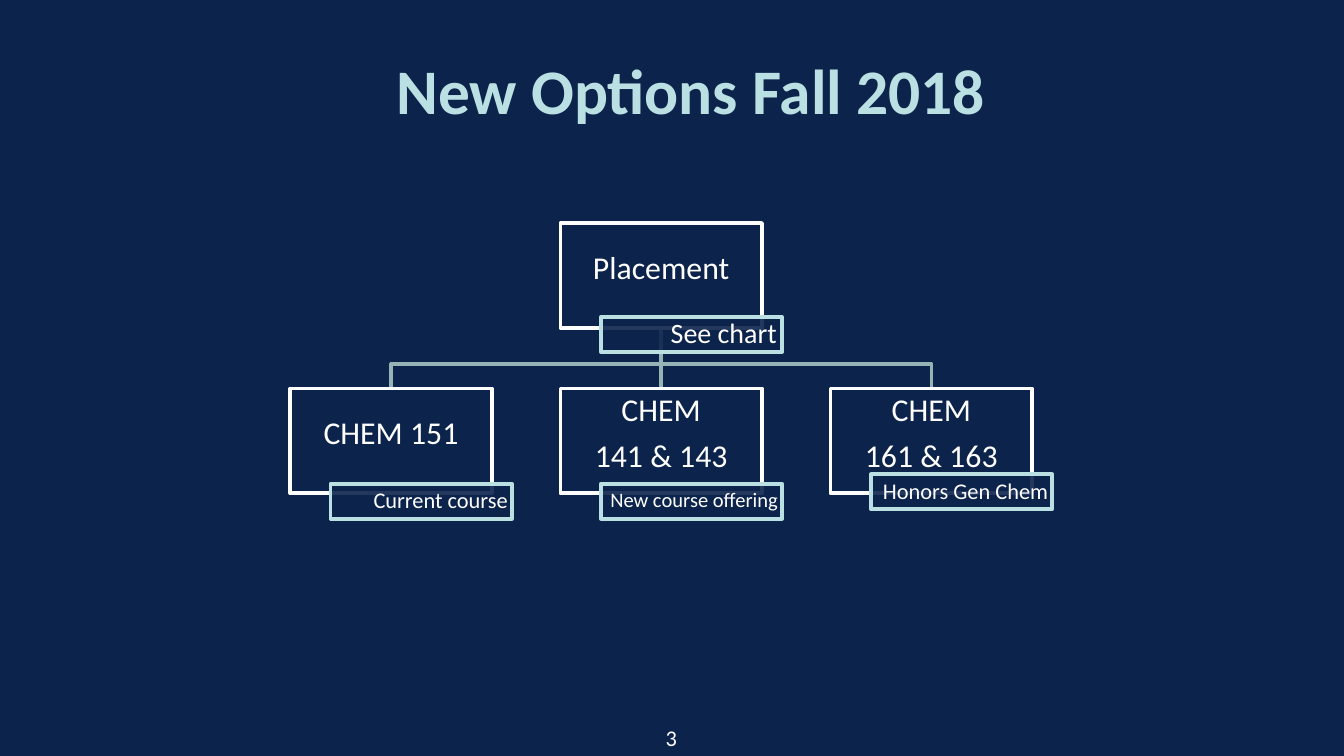
from dataclasses import dataclass

import pptx
import pptx.dml.color
import pptx.enum.shapes
import pptx.enum.text
import pptx.oxml
import pptx.oxml.ns
import pptx.util
from lxml import etree

Inches = pptx.util.Inches
Align = pptx.enum.text.PP_ALIGN


@dataclass(frozen=True)
class Theme:
    font: str = "Calibri"
    navy: str = "0C234B"
    white: str = "FFFFFF"
    aqua: str = "BBE0E3"
    branch: str = "96B3B6"
    title_size: int = 34
    course_size: int = 17
    number_size: int = 12
    line_width: int = 2


@dataclass(frozen=True)
class Node:
    column: int
    row: int
    lines: tuple[str, ...]
    tag: str
    tag_size: int
    tag_drop: float = 0.71

    @property
    def left(self) -> float:
        return GRID_LEFT + self.column * COLUMN_PITCH

    @property
    def top(self) -> float:
        return GRID_TOP + self.row * ROW_PITCH

    @property
    def center(self) -> float:
        return self.left + BOX_WIDTH / 2


THEME = Theme()

# Grid of the chart, in inches
GRID_LEFT, GRID_TOP = 2.16, 1.66
COLUMN_PITCH, ROW_PITCH = 2.01, 1.23
BOX_WIDTH, BOX_HEIGHT = 1.5, 0.78
TAG_WIDTH, TAG_HEIGHT, TAG_SHIFT = 1.35, 0.26, 0.3
BRANCH_DROP = 0.27

ROOT = Node(1, 0, ("Placement",), "See chart", 15, 0.7)
COURSES = (
    Node(0, 1, ("CHEM 151",), "Current course", 12),
    Node(1, 1, ("CHEM", "141 & 143"), "New course offering", 11),
    Node(2, 1, ("CHEM", "161 & 163"), "Honors Gen Chem", 12, 0.64),
)


def rgb(color: str) -> pptx.dml.color.RGBColor:
    return pptx.dml.color.RGBColor.from_string(color)


def set_line(shape, color: str) -> None:
    shape.line.color.rgb = rgb(color)
    shape.line.width = pptx.util.Pt(THEME.line_width)


def write(shape, lines: tuple[str, ...], size: int, color: str, align: Align,
          insets: tuple[float, float, float, float], bold: bool = False,
          wrap: bool = True, compact: bool = False) -> None:
    """Fill a shape with text; insets run left, top, right, bottom."""
    frame = shape.text_frame
    frame.word_wrap = wrap
    frame.auto_size = pptx.enum.text.MSO_AUTO_SIZE.NONE
    frame.vertical_anchor = pptx.enum.text.MSO_ANCHOR.MIDDLE
    (frame.margin_left, frame.margin_top,
     frame.margin_right, frame.margin_bottom) = map(Inches, insets)
    frame.text = "\n".join(lines)
    for paragraph in frame.paragraphs:
        paragraph.alignment = align
        if compact:
            paragraph.line_spacing = 0.9
            paragraph.space_after = pptx.util.Pt(round(size * 0.35))
        paragraph.font.name = THEME.font
        paragraph.font.size = pptx.util.Pt(size)
        paragraph.font.bold = bold
        paragraph.font.color.rgb = rgb(color)


def add_box(slide, left: float, top: float, width: float, height: float, outline: str):
    box = slide.shapes.add_shape(
        pptx.enum.shapes.MSO_SHAPE.RECTANGLE,
        Inches(left), Inches(top), Inches(width), Inches(height))
    box.shadow.inherit = False
    box.fill.solid()
    box.fill.fore_color.rgb = rgb(THEME.navy)
    set_line(box, outline)
    return box


def add_node(slide, node: Node):
    """Draw a course box with its overlapping tag and return the box."""
    box = add_box(slide, node.left, node.top, BOX_WIDTH, BOX_HEIGHT, THEME.white)
    write(box, node.lines, THEME.course_size, THEME.white, Align.CENTER,
          (0.01, 0.01, 0.01, 0.11), compact=True)

    tag = add_box(slide, node.left + TAG_SHIFT, node.top + node.tag_drop,
                  TAG_WIDTH, TAG_HEIGHT, THEME.aqua)
    color = tag._element.spPr.find(".//" + pptx.oxml.ns.qn("a:srgbClr"))
    etree.SubElement(color, pptx.oxml.ns.qn("a:alpha"), val="90000")
    inset = 0.04 if node.tag_size > 12 else 0.03
    write(tag, (node.tag,), node.tag_size, THEME.white, Align.RIGHT,
          (inset, 0.01, inset, 0.01), compact=True)
    return box


def add_elbow(slide, parent: Node, child: Node) -> None:
    start = parent.top + BOX_HEIGHT
    turn = start + BRANCH_DROP
    builder = slide.shapes.build_freeform(Inches(parent.center), Inches(start))
    corners = ((parent.center, turn), (child.center, turn), (child.center, child.top))
    builder.add_line_segments([(Inches(x), Inches(y)) for x, y in corners], close=False)
    elbow = builder.convert_to_shape()
    elbow.shadow.inherit = False
    elbow.fill.background()
    set_line(elbow, THEME.branch)


def add_stem(slide, parent: Node, child: Node):
    stem = slide.shapes.add_connector(
        pptx.enum.shapes.MSO_CONNECTOR.STRAIGHT,
        Inches(parent.center), Inches(parent.top + BOX_HEIGHT),
        Inches(child.center), Inches(child.top))
    set_line(stem, THEME.branch)
    etree.SubElement(stem._element.spPr, pptx.oxml.ns.qn("a:effectLst"))
    return stem


def main() -> None:
    # Widescreen page, 16 to 9
    presentation = pptx.Presentation()
    presentation.slide_width = Inches(10)
    presentation.slide_height = presentation.slide_width * 9 // 16
    slide = presentation.slides.add_slide(presentation.slide_layouts[5])
    slide.background.fill.solid()
    slide.background.fill.fore_color.rgb = rgb(THEME.navy)

    # Title
    title = slide.shapes.title
    title.left, title.top = Inches(1.04), Inches(0.33)
    title.width, title.height = Inches(8.2), Inches(0.66)
    write(title, ("New Options Fall 2018",), THEME.title_size, THEME.aqua,
          Align.CENTER, (0.04,) * 4, bold=True)

    # Branches lie behind the boxes
    left_course, middle_course, right_course = COURSES
    add_elbow(slide, ROOT, right_course)
    stem = add_stem(slide, ROOT, middle_course)
    add_elbow(slide, ROOT, left_course)

    # Boxes and tags, with the stem joined bottom to top
    root_box = add_node(slide, ROOT)
    course_boxes = [add_node(slide, course) for course in COURSES]
    stem.begin_connect(root_box, 2)
    stem.end_connect(course_boxes[1], 0)

    # Slide number
    number = slide.shapes.add_textbox(
        Inches(4.72), Inches(5.34), Inches(0.55), Inches(0.29))
    write(number, ("3",), THEME.number_size, THEME.white, Align.CENTER,
          (0.1, 0.05, 0.1, 0.05), wrap=False)

    presentation.save("out.pptx")


if __name__ == "__main__":
    main()
